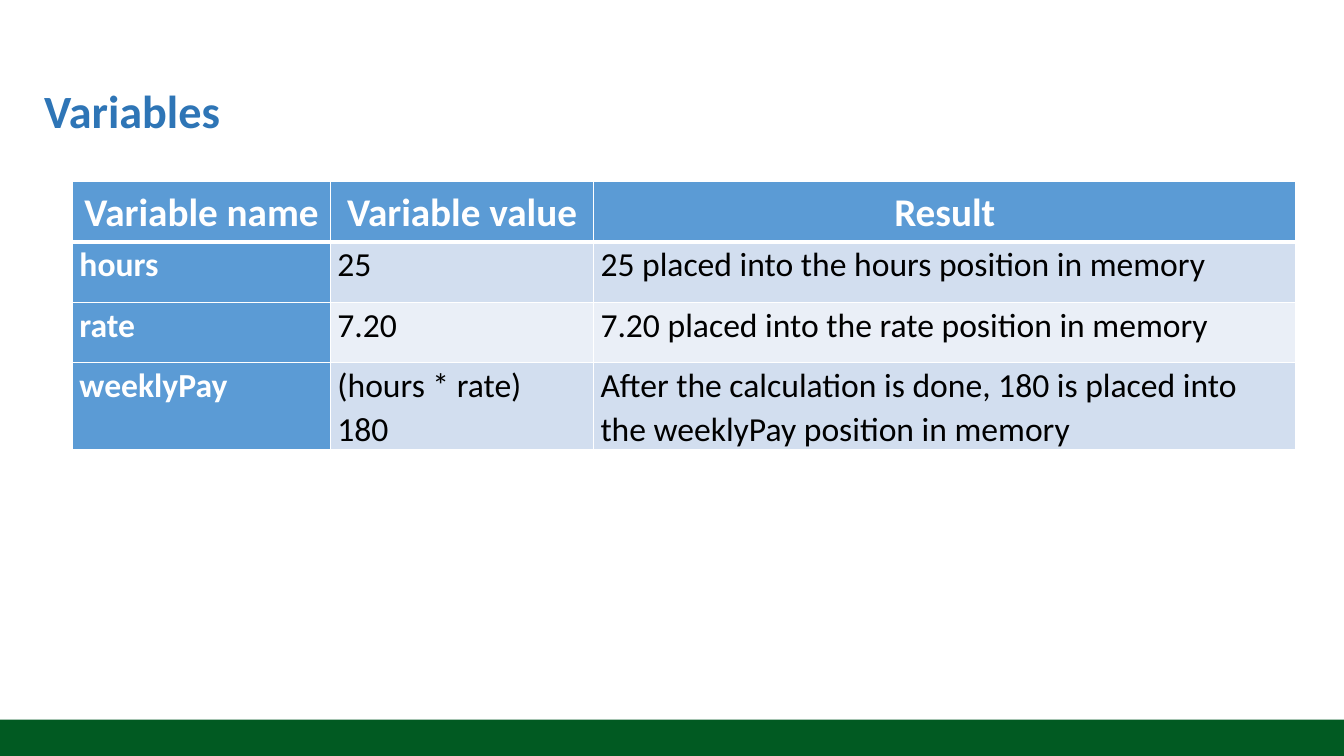
from lxml.etree import SubElement
from pptx import Presentation
from pptx.dml.color import RGBColor
from pptx.enum.shapes import MSO_SHAPE
from pptx.enum.text import MSO_ANCHOR, PP_ALIGN
from pptx.oxml.ns import qn
from pptx.util import Pt

FONT = "Calibri"
WHITE = RGBColor(0xFF, 0xFF, 0xFF)
BLACK = RGBColor(0x00, 0x00, 0x00)
GREEN = RGBColor(0x01, 0x5A, 0x22)
TITLE_BLUE = RGBColor(0x2E, 0x75, 0xB6)
HEADER_BLUE = RGBColor(0x5B, 0x9B, 0xD5)
BANDS = (RGBColor(0xEA, 0xEF, 0xF7), RGBColor(0xD2, 0xDE, 0xEF))

COLUMN_WIDTHS = (184.3, 187.9, 501.8)
ROW_HEIGHTS = (43.2, 43.2, 43.2, 47.5)
ROWS = (
    ("Variable name", "Variable value", "Result"),
    ("hours", "25", "25 placed into the hours position in memory"),
    ("rate", "7.20", "7.20 placed into the rate position in memory"),
    ("weeklyPay", "(hours * rate)\n180",
     "After the calculation is done, 180 is placed into the weeklyPay position in memory"),
)


def style_text(tf, size, color, bold, spacing, align=PP_ALIGN.LEFT):
    """Format every paragraph of a text frame alike."""
    for p in tf.paragraphs:
        p.alignment = align
        p.line_spacing = spacing
        p.font.name = FONT
        p.font.size = Pt(size)
        p.font.bold = bold
        p.font.color.rgb = color


def add_title(s, text):
    """Add the slide title."""
    tf = s.shapes.add_textbox(Pt(24.5), Pt(28.8), Pt(913), Pt(104.4)).text_frame
    tf.word_wrap = True
    tf.vertical_anchor = MSO_ANCHOR.MIDDLE
    tf.text = text
    style_text(tf, 33, TITLE_BLUE, True, 0.9)


def add_footer_bar(s):
    """Add the green bar along the bottom edge."""
    sp = s.shapes.add_shape(MSO_SHAPE.RECTANGLE, 0, Pt(514), Pt(960), Pt(26))
    sp.shadow.inherit = False
    sp.fill.solid()
    sp.fill.fore_color.rgb = GREEN
    sp.line.fill.background()


def set_borders(cell, widths):
    """Draw white cell borders from a mapping of side to width."""
    tcPr = cell._tc.get_or_add_tcPr()
    for side, width in widths.items():
        ln = SubElement(tcPr, qn(f"a:ln{side}"), w=str(Pt(width)))
        fill = SubElement(ln, qn("a:solidFill"))
        SubElement(fill, qn("a:srgbClr"), val=str(WHITE))


def fill_cell(cell, text, row, col):
    """Write one table cell with the look of its row and column."""
    is_header = row == 0
    is_label = is_header or col == 0
    set_borders(cell, {"L": 1, "R": 1, "T": 3 if row == 1 else 1, "B": 3 if is_header else 1})
    cell.fill.solid()
    cell.fill.fore_color.rgb = HEADER_BLUE if is_label else BANDS[row % 2]
    cell.margin_left = cell.margin_right = Pt(5)
    cell.margin_top = cell.margin_bottom = 0
    cell.vertical_anchor = MSO_ANCHOR.MIDDLE if is_header else MSO_ANCHOR.TOP
    cell.text = text
    style_text(cell.text_frame, 28 if is_header else 24, WHITE if is_label else BLACK,
               is_label, 1.07, PP_ALIGN.CENTER if is_header else PP_ALIGN.LEFT)


def add_variables_table(s):
    """Add the table of variables, values and results."""
    table = s.shapes.add_table(len(ROWS), len(COLUMN_WIDTHS), Pt(51.8), Pt(129.6),
                               Pt(sum(COLUMN_WIDTHS)), Pt(sum(ROW_HEIGHTS))).table
    for column, width in zip(table.columns, COLUMN_WIDTHS):
        column.width = Pt(width)
    for row, (height, texts) in enumerate(zip(ROW_HEIGHTS, ROWS)):
        table.rows[row].height = Pt(height)
        for col, text in enumerate(texts):
            fill_cell(table.cell(row, col), text, row, col)


def main():
    """Build and save the slide."""
    prs = Presentation()
    prs.slide_width, prs.slide_height = Pt(960), Pt(540)
    s = prs.slides.add_slide(prs.slide_layouts[6])
    add_footer_bar(s)
    add_title(s, "Variables")
    add_variables_table(s)
    prs.save("out.pptx")


if __name__ == "__main__":
    main()
